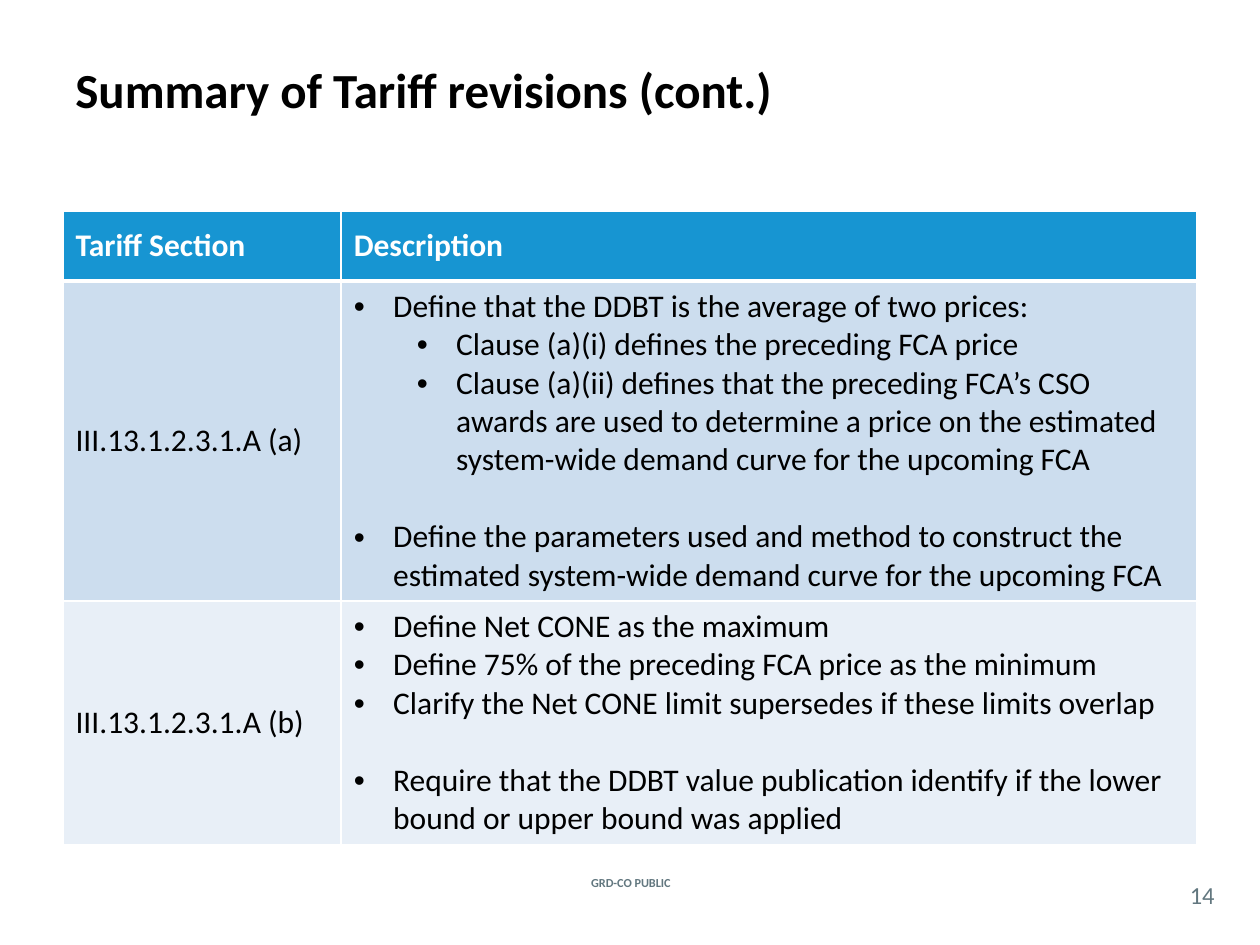
from lxml import etree
from pptx import Presentation
from pptx import util as u
from pptx.dml.color import RGBColor
from pptx.enum import text as t
from pptx.oxml import ns

COLORS = {
    "ink": "000000",
    "white": "FFFFFF",
    "muted": "62777F",
    "header": "1795D2",
    "band_dark": "CCDDEE",
    "band_light": "E8EFF7",
}
FONT = "Calibri"
INDENT = 22.5
LEVEL_STEP = 36
LINE_GAP = 22

HEADINGS = ("Tariff Section", "Description")
# Each point is (text, level, space before in points).
REVISIONS = [
    ("III.13.1.2.3.1.A (a)", 183, "band_dark", [
        ("Define that the DDBT is the average of two prices:", 0, 0),
        ("Clause (a)(i) defines the preceding FCA price", 1, 0),
        ("Clause (a)(ii) defines that the preceding FCA’s CSO awards are used to "
         "determine a price on the estimated system-wide demand curve for the "
         "upcoming FCA", 1, 0),
        ("Define the parameters used and method to construct the estimated "
         "system-wide demand curve for the upcoming FCA", 0, LINE_GAP),
    ]),
    ("III.13.1.2.3.1.A (b)", 139, "band_light", [
        ("Define Net CONE as the maximum", 0, 0),
        ("Define 75% of the preceding FCA price as the minimum", 0, 0),
        ("Clarify the Net CONE limit supersedes if these limits overlap", 0, 0),
        ("Require that the DDBT value publication identify if the lower bound or "
         "upper bound was applied", 0, LINE_GAP),
    ]),
]


def rgb(color):
    return RGBColor.from_string(COLORS[color])


def write(paragraph, words, size=18, color="ink", bold=False,
          align=t.PP_ALIGN.LEFT, bullet_level=None, before=0):
    if bullet_level is not None:
        props = paragraph._p.get_or_add_pPr()
        props.set("marL", str(u.Pt(INDENT + LEVEL_STEP * bullet_level)))
        props.set("indent", str(u.Pt(-INDENT)))
        etree.SubElement(props, ns.qn("a:buFont"), typeface="Arial")
        etree.SubElement(props, ns.qn("a:buChar"), char="•")
        paragraph.level = bullet_level
    paragraph.alignment = align
    if before:
        paragraph.space_before = u.Pt(before)
    run = paragraph.add_run()
    run.text = words
    run.font.name = FONT
    run.font.size = u.Pt(size)
    run.font.bold = bold
    run.font.color.rgb = rgb(color)


class SlideBuilder:
    def __init__(self, slide):
        self.slide = slide

    def label(self, words, left, top, width, height, inset=7.2, **style):
        frame = self.slide.shapes.add_textbox(
            u.Pt(left), u.Pt(top), u.Pt(width), u.Pt(height)).text_frame
        frame.word_wrap = True
        frame.vertical_anchor = t.MSO_ANCHOR.MIDDLE
        frame.margin_left = frame.margin_right = u.Pt(inset)
        frame.margin_top = frame.margin_bottom = u.Pt(inset / 2)
        write(frame.paragraphs[0], words, **style)

    def table(self, left, top, widths, heights):
        table = self.slide.shapes.add_table(
            len(heights), len(widths), u.Pt(left), u.Pt(top),
            u.Pt(sum(widths)), u.Pt(sum(heights))).table
        for column, width in zip(table.columns, widths):
            column.width = u.Pt(width)
        for row, height in zip(table.rows, heights):
            row.height = u.Pt(height)
        return table

    def style_cell(self, cell, fill, top=1, bottom=1):
        """Draw white borders, then the fill, in the order the schema asks for."""
        props = cell._tc.get_or_add_tcPr()
        for side, width in (("L", 1), ("R", 1), ("T", top), ("B", bottom)):
            line = etree.SubElement(props, ns.qn(f"a:ln{side}"), w=str(u.Pt(width)))
            solid = etree.SubElement(line, ns.qn("a:solidFill"))
            etree.SubElement(solid, ns.qn("a:srgbClr"), val=COLORS["white"])
        cell.fill.solid()
        cell.fill.fore_color.rgb = rgb(fill)
        cell.vertical_anchor = t.MSO_ANCHOR.MIDDLE

    def revisions_table(self):
        heights = [40] + [height for _, height, _, _ in REVISIONS]
        table = self.table(36, 120.5, (159, 489), heights)
        for column, heading in enumerate(HEADINGS):
            cell = table.cell(0, column)
            self.style_cell(cell, "header", bottom=3)
            write(cell.text_frame.paragraphs[0], heading, color="white", bold=True)
        for row, (section, _, band, points) in enumerate(REVISIONS, start=1):
            section_cell, description = table.cell(row, 0), table.cell(row, 1)
            for cell in (section_cell, description):
                self.style_cell(cell, band, top=3 if row == 1 else 1)
            write(section_cell.text_frame.paragraphs[0], section)
            frame = description.text_frame
            for index, (words, level, before) in enumerate(points):
                paragraph = frame.add_paragraph() if index else frame.paragraphs[0]
                write(paragraph, words, bullet_level=level, before=before)


def main():
    deck = Presentation()
    deck.slide_width, deck.slide_height = u.Pt(720), u.Pt(540)
    builder = SlideBuilder(deck.slides.add_slide(deck.slide_layouts[6]))
    center = t.PP_ALIGN.CENTER
    builder.label("GRD-CO PUBLIC", 307.5, 498, 106, 12.5,
                  size=7, color="muted", bold=True, align=center)
    builder.label("14", 672, 501, 30, 21, inset=0,
                  size=14, color="muted", align=center)
    builder.label("Summary of Tariff revisions (cont.)", 36, 6, 648, 90,
                  size=28, bold=True)
    builder.revisions_table()
    deck.save("out.pptx")


if __name__ == "__main__":
    main()
